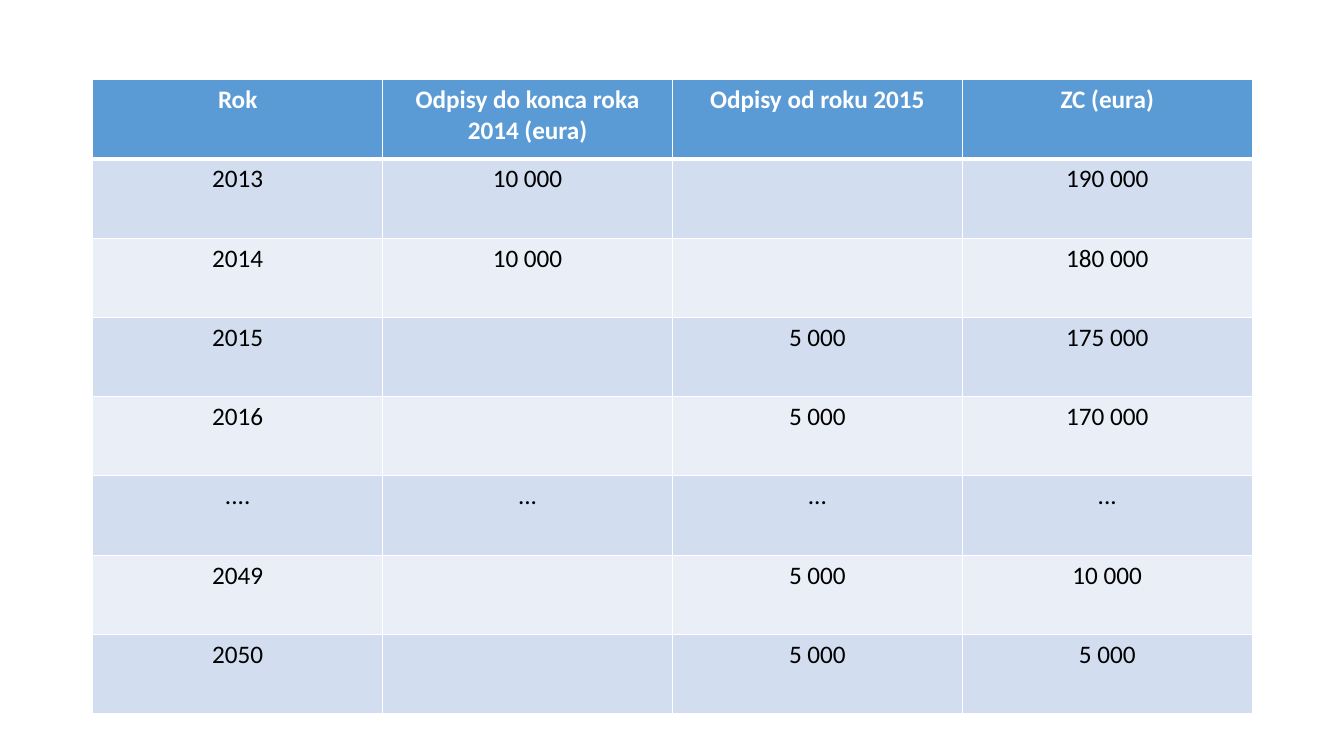
from dataclasses import dataclass

import lxml.etree
import pptx
import pptx.dml.color
import pptx.enum.text
import pptx.oxml.ns
import pptx.util

Inches = pptx.util.Inches
Pt = pptx.util.Pt
qn = pptx.oxml.ns.qn

LEFT, TOP, WIDTH, HEIGHT = 0.92, 0.79, 11.5, 6.29
WHITE, BLACK = "FFFFFF", "000000"
HEADER_FILL = "5B9BD5"
BAND_FILLS = ("D2DEEF", "EAEFF7")
THIN, THICK = 1, 3


@dataclass
class DepreciationRow:
    year: str
    until_2014: str
    from_2015: str
    residual: str

    def texts(self) -> tuple[str, ...]:
        return self.year, self.until_2014, self.from_2015, self.residual


ROWS = [
    DepreciationRow("Rok", "Odpisy do konca roka 2014 (eura)", "Odpisy od roku 2015", "ZC (eura)"),
    DepreciationRow("2013", "10 000", "", "190 000"),
    DepreciationRow("2014", "10 000", "", "180 000"),
    DepreciationRow("2015", "", "5 000", "175 000"),
    DepreciationRow("2016", "", "5 000", "170 000"),
    DepreciationRow("....", "...", "...", "..."),
    DepreciationRow("2049", "", "5 000", "10 000"),
    DepreciationRow("2050", "", "5 000", "5 000"),
]


def rgb(color: str) -> pptx.dml.color.RGBColor:
    return pptx.dml.color.RGBColor.from_string(color)


def set_text(tf, text: str, *, size: float = 18, color: str = BLACK,
             bold: bool = False, font: str = "Calibri") -> None:
    p = tf.paragraphs[0]
    p.alignment = pptx.enum.text.PP_ALIGN.CENTER
    if not text:
        return
    r = p.add_run()
    r.text = text
    r.font.size, r.font.bold, r.font.name = Pt(size), bold, font
    r.font.color.rgb = rgb(color)


def set_borders(cell, *, top: float = THIN, bottom: float = THIN) -> None:
    tc_pr = cell._tc.get_or_add_tcPr()
    widths = {"a:lnL": THIN, "a:lnR": THIN, "a:lnT": top, "a:lnB": bottom}
    for tag, width in widths.items():
        ln = lxml.etree.SubElement(tc_pr, qn(tag), w=str(Pt(width)))
        fill = lxml.etree.SubElement(ln, qn("a:solidFill"))
        lxml.etree.SubElement(fill, qn("a:srgbClr"), val=WHITE)


def add_depreciation_table(slide, rows: list[DepreciationRow]) -> None:
    n_cols = len(rows[0].texts())
    table = slide.shapes.add_table(len(rows), n_cols, Inches(LEFT), Inches(TOP),
                                   Inches(WIDTH), Inches(HEIGHT)).table
    table.horz_banding = False
    for col in table.columns:
        col.width = Inches(WIDTH / n_cols)
    for i, row in enumerate(rows):
        header = i == 0
        table.rows[i].height = Inches(HEIGHT / len(rows))
        for j, text in enumerate(row.texts()):
            cell = table.cell(i, j)
            set_borders(cell, top=THICK if i == 1 else THIN, bottom=THICK if header else THIN)
            cell.fill.solid()
            cell.fill.fore_color.rgb = rgb(HEADER_FILL if header else BAND_FILLS[(i - 1) % 2])
            set_text(cell.text_frame, text, color=WHITE if header else BLACK, bold=header)


def main() -> None:
    prs = pptx.Presentation()
    prs.slide_width, prs.slide_height = Inches(13.33), Inches(7.5)
    slide = prs.slides.add_slide(prs.slide_layouts[6])
    add_depreciation_table(slide, ROWS)
    prs.save("out.pptx")


if __name__ == "__main__":
    main()
